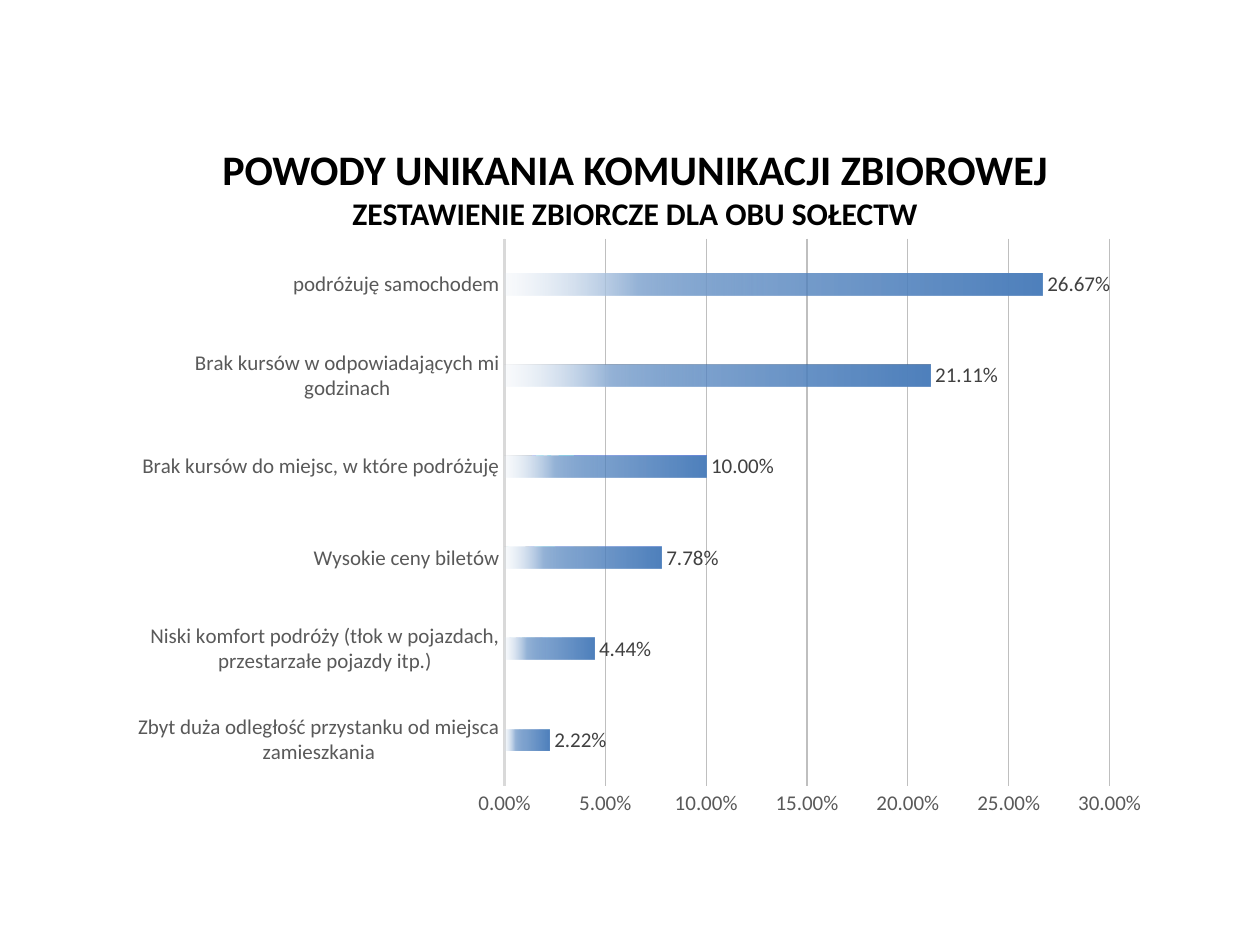
from lxml import etree
from pptx import Presentation
from pptx.chart.data import CategoryChartData
from pptx.dml.color import RGBColor
from pptx.enum import chart as ch, text
from pptx.oxml.ns import qn
from pptx.util import Cm, Pt

COLORS = {"title": "000000", "axis_text": "595959", "label": "404040",
          "axis": "D9D9D9", "grid": "BFBFBF",
          "bar": "4F81BD", "bar_mid": "95B3D7", "bar_pale": "DCE6F2"}
FONT = "Calibri"
PERCENT = "0.00%"

TITLE = [("POWODY UNIKANIA KOMUNIKACJI ZBIOROWEJ", 24),
         ("ZESTAWIENIE ZBIORCZE DLA OBU SOŁECTW", 18)]
TITLE_BOX = (2.39, 2.77, 20.83, 2.06)

# Listed from the bottom of the chart upwards
REASONS = [
    ("Zbyt duża odległość przystanku od miejsca\nzamieszkania", 0.0222),
    ("Niski komfort podróży (tłok w pojazdach,\nprzestarzałe pojazdy itp.)", 0.0444),
    ("Wysokie ceny biletów", 0.0778),
    ("Brak kursów do miejsc, w które podróżuję", 0.1),
    ("Brak kursów w odpowiadających mi godzinach", 0.2111),
    ("podróżuję samochodem", 0.2667),
]
CHART_BOX = (2.39, 4.57, 21.03, 12.12)
PLOT = {"x": 0.37, "y": 0.02, "w": 0.58, "h": 0.91}  # shares of the chart

# Position %, colour, opacity %
BAR_STOPS = [(0, "bar", 100), (51, "bar", 75),
             (75, "bar_mid", 100), (100, "bar_pale", 15)]


def rgb(name):
    return RGBColor.from_string(COLORS[name])


def set_font(font, size, color, **extra):
    values = {"name": FONT, "size": Pt(size), **extra}
    for key, value in values.items():
        setattr(font, key, value)
    font.color.rgb = rgb(color)


def set_line(line, color, width):
    line.color.rgb = rgb(color)
    line.width = Pt(width)


def fill_bars(series):
    """Fade the bars from solid at the tip to nearly clear at the axis."""
    fill = series.format.fill
    fill.gradient()
    fill.gradient_angle = 180
    stops = series._element.find(".//" + qn("a:gsLst"))
    for old in list(stops):
        stops.remove(old)
    for pos, color, opacity in BAR_STOPS:
        gs = etree.SubElement(stops, qn("a:gs"), pos=str(pos * 1000))
        clr = etree.SubElement(gs, qn("a:srgbClr"), val=COLORS[color])
        if opacity < 100:
            etree.SubElement(clr, qn("a:alpha"), val=str(opacity * 1000))


def place_plot(chart):
    """Fix the inner plot area at the shares given in PLOT."""
    area = chart._chartSpace.find(".//" + qn("c:plotArea"))
    for old in area.findall(qn("c:layout")):
        area.remove(old)
    layout = etree.Element(qn("c:layout"))
    area.insert(0, layout)
    manual = etree.SubElement(layout, qn("c:manualLayout"))
    settings = {"layoutTarget": "inner", "xMode": "edge", "yMode": "edge", **PLOT}
    for tag, value in settings.items():
        etree.SubElement(manual, qn("c:" + tag), val=str(value))


def add_reasons_chart(slide):
    data = CategoryChartData(number_format=PERCENT)
    data.categories = [reason for reason, _ in REASONS]
    data.add_series("Series 1", [share for _, share in REASONS])
    chart = slide.shapes.add_chart(ch.XL_CHART_TYPE.BAR_CLUSTERED,
                                   *map(Cm, CHART_BOX), data).chart
    chart.has_title = chart.has_legend = False
    set_font(chart.font, 10, "title")
    place_plot(chart)

    plot = chart.plots[0]
    plot.gap_width, plot.overlap = 326, -58
    plot.vary_by_categories = False
    fill_bars(plot.series[0])

    plot.has_data_labels = True
    labels = plot.data_labels
    label_format = {"show_value": True, "number_format": PERCENT,
                    "number_format_is_linked": False,
                    "position": ch.XL_LABEL_POSITION.OUTSIDE_END}
    for key, value in label_format.items():
        setattr(labels, key, value)
    set_font(labels.font, 12, "label")

    cat, val = chart.category_axis, chart.value_axis
    for axis in (cat, val):
        axis.major_tick_mark = axis.minor_tick_mark = ch.XL_TICK_MARK.NONE
        set_font(axis.tick_labels.font, 12, "axis_text")
    set_line(cat.format.line, "axis", 1.5)
    val.format.line.fill.background()
    val.minimum_scale, val.maximum_scale, val.major_unit = 0, 0.3, 0.05
    val.has_major_gridlines = True
    set_line(val.major_gridlines.format.line, "grid", 0.75)
    val.tick_labels.number_format = PERCENT
    val.tick_labels.number_format_is_linked = False


def add_title(slide):
    tf = slide.shapes.add_textbox(*map(Cm, TITLE_BOX)).text_frame
    tf.word_wrap = True
    tf.auto_size = text.MSO_AUTO_SIZE.SHAPE_TO_FIT_TEXT
    for i, (line, size) in enumerate(TITLE):
        p = tf.add_paragraph() if i else tf.paragraphs[0]
        p.alignment = text.PP_ALIGN.CENTER
        r = p.add_run()
        r.text = line
        set_font(r.font, size, "title", bold=True)


def main():
    prs = Presentation()
    prs.slide_width, prs.slide_height = Cm(25.4), Cm(19.05)
    s = prs.slides.add_slide(prs.slide_layouts[6])
    add_reasons_chart(s)
    add_title(s)
    prs.save("out.pptx")


if __name__ == "__main__":
    main()
